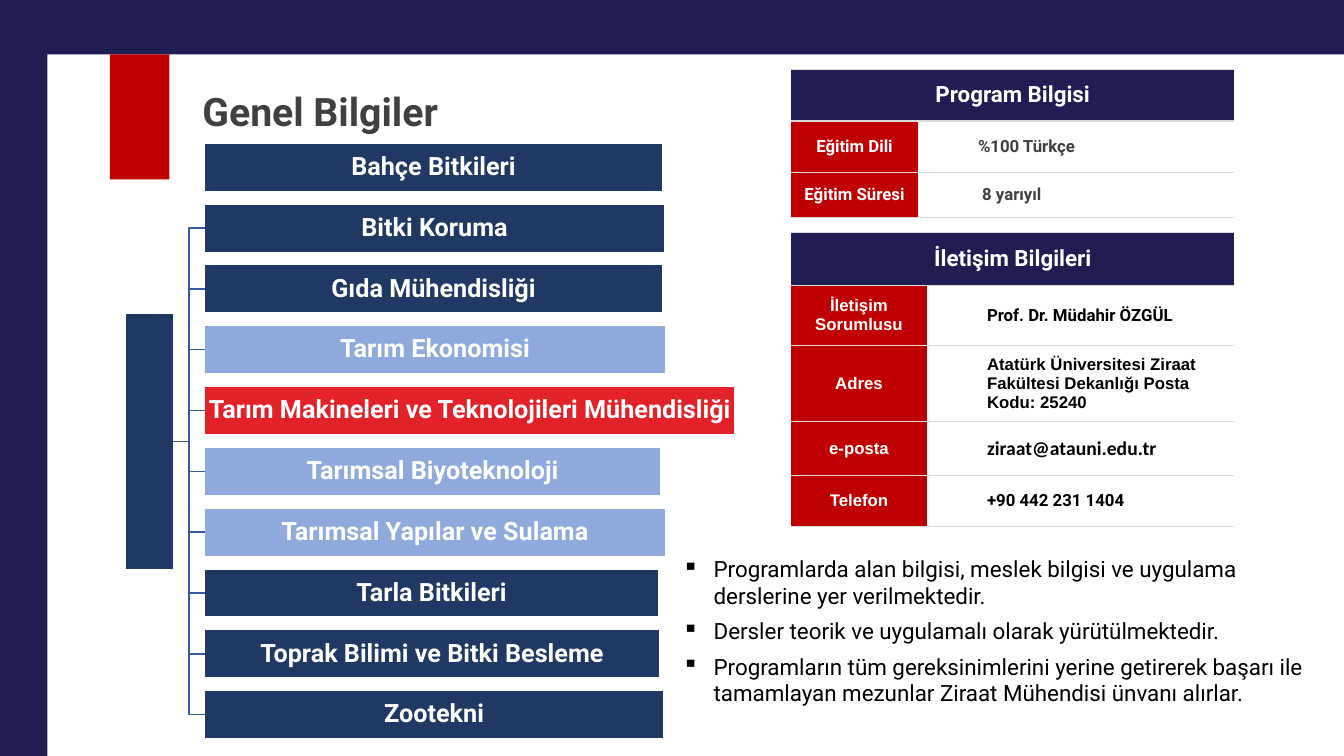
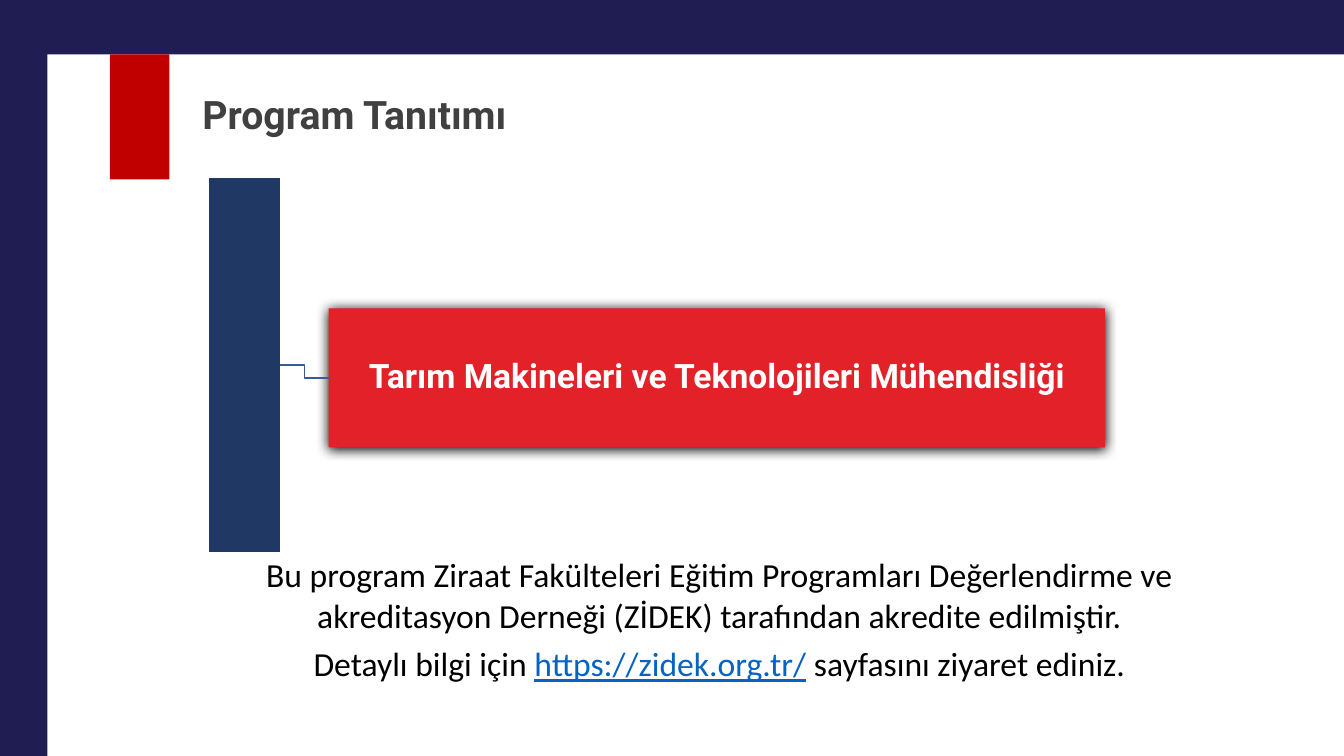
"""Build two slides presenting the faculty's departments and the programme."""
from typing import NamedTuple

from lxml.etree import Element, SubElement
from pptx import Presentation
from pptx.dml.color import RGBColor
from pptx.enum.shapes import MSO_CONNECTOR, MSO_SHAPE
from pptx.enum.text import MSO_ANCHOR, PP_ALIGN
from pptx.oxml.ns import qn
from pptx.shapes.autoshape import Shape
from pptx.slide import Slide
from pptx.text.text import TextFrame, _Paragraph
from pptx.util import Inches, Pt

BAND = RGBColor(0x20, 0x1D, 0x52)
HEADER = RGBColor(0x1F, 0x1D, 0x52)
ACCENT = RGBColor(0xC0, 0x00, 0x00)
NAVY = RGBColor(0x20, 0x38, 0x64)
SKY = RGBColor(0x8F, 0xAA, 0xDC)
RED = RGBColor(0xE2, 0x21, 0x28)
BRANCH = RGBColor(0x36, 0x5B, 0x9D)
RULE = RGBColor(0xD9, 0xD9, 0xD9)
LINK = RGBColor(0x05, 0x63, 0xC1)
GREY = RGBColor(0x40, 0x40, 0x41)
BLACK = RGBColor(0, 0, 0)
WHITE = RGBColor(0xFF, 0xFF, 0xFF)

SLIDE_WIDTH, SLIDE_HEIGHT = 13.33, 7.5
BAND_LEFT, BAND_TOP = 0.47, 0.54
PROGRAM = "Tarım Makineleri ve Teknolojileri Mühendisliği"


class Box(NamedTuple):
    """Position and size in inches."""

    left: float
    top: float
    width: float
    height: float


class Style(NamedTuple):
    """Look of a run of text."""

    size: float
    color: RGBColor = WHITE
    font: str = "Roboto"
    bold: bool = True
    underline: bool = False


class Department(NamedTuple):
    """One bar of the department list."""

    name: str
    width: float
    color: RGBColor = NAVY


class Fact(NamedTuple):
    """One labelled row of an information table."""

    label: str
    value: str
    height: float
    label_style: Style
    value_style: Style


class Run(NamedTuple):
    """A piece of text with its style."""

    text: str
    style: Style


LABEL = Style(12)
LABEL_ARIAL = Style(12, font="Arial")
VALUE = Style(12, BLACK)
VALUE_GREY = Style(12, GREY)
BULLET = Style(16, BLACK, bold=False)
NOTE = Style(24, BLACK, "Calibri", False)

DEPARTMENTS = [
    Department("Bahçe Bitkileri", 4.54),
    Department("Bitki Koruma", 4.56),
    Department("Gıda Mühendisliği", 4.54),
    Department("Tarım Ekonomisi", 4.57, SKY),
    Department(PROGRAM, 5.26, RED),
    Department("Tarımsal Biyoteknoloji", 4.52, SKY),
    Department("Tarımsal Yapılar ve Sulama", 4.57, SKY),
    Department("Tarla Bitkileri", 4.5),
    Department("Toprak Bilimi ve Bitki Besleme", 4.51),
    Department("Zootekni", 4.55),
]
PROGRAM_FACTS = [
    Fact("Eğitim Dili", "%100 Türkçe", 0.51, LABEL, VALUE_GREY),
    Fact("Eğitim Süresi", " 8 yarıyıl", 0.45, LABEL, VALUE_GREY),
]
CONTACT_FACTS = [
    Fact("İletişim Sorumlusu", "Prof. Dr. Müdahir ÖZGÜL", 0.6, LABEL_ARIAL, VALUE),
    Fact("Adres", "Atatürk Üniversitesi Ziraat Fakültesi Dekanlığı Posta Kodu: 25240",
         0.75, LABEL_ARIAL, Style(12, BLACK, "Arial")),
    Fact("e-posta", "ziraat@atauni.edu.tr", 0.54, LABEL_ARIAL, Style(14, BLACK, "Calibri")),
    Fact("Telefon", "+90 442 231 1404", 0.5, LABEL_ARIAL, VALUE),
]
BULLETS = [
    "Programlarda alan bilgisi, meslek bilgisi ve uygulama derslerine yer verilmektedir.",
    "Dersler teorik ve uygulamalı olarak yürütülmektedir.",
    "Programların tüm gereksinimlerini yerine getirerek başarı ile tamamlayan mezunlar "
    "Ziraat Mühendisi ünvanı alırlar.",
]
ACCREDITATION = [
    [Run("Bu program Ziraat Fakülteleri Eğitim Programları Değerlendirme ve akreditasyon "
         "Derneği (ZİDEK) tarafından akredite edilmiştir.", NOTE)],
    [Run("Detaylı bilgi için ", NOTE),
     Run("https://zidek.org.tr/", NOTE._replace(color=LINK, underline=True)),
     Run(" sayfasını ziyaret ediniz.", NOTE)],
]


def add_run(paragraph: _Paragraph, text: str, style: Style) -> None:
    """Append a styled run to a paragraph."""
    run = paragraph.add_run()
    run.text = text
    run.font.size = Pt(style.size)
    run.font.name = style.font
    run.font.bold = style.bold
    run.font.underline = style.underline
    run.font.color.rgb = style.color


def add_block(slide: Slide, box: Box, fill: RGBColor, outlined: bool = False) -> Shape:
    """Draw a filled rectangle."""
    block = slide.shapes.add_shape(MSO_SHAPE.RECTANGLE, *map(Inches, box))
    block.shadow.inherit = False
    block.fill.solid()
    block.fill.fore_color.rgb = fill
    if outlined:
        block.line.color.rgb = WHITE
        block.line.width = Pt(1)
    else:
        block.line.fill.background()
    return block


def add_caption(block: Shape, text: str, size: float) -> None:
    """Centre a white caption in a block."""
    frame = block.text_frame
    frame.word_wrap = True
    frame.vertical_anchor = MSO_ANCHOR.MIDDLE
    frame.margin_left = frame.margin_right = Inches(0.01)
    frame.margin_top = frame.margin_bottom = Inches(0.01)
    paragraph = frame.paragraphs[0]
    paragraph.alignment = PP_ALIGN.CENTER
    paragraph.line_spacing = 0.9
    add_run(paragraph, text, Style(size))


def add_text_frame(slide: Slide, box: Box) -> TextFrame:
    """Add a wrapping text box."""
    frame = slide.shapes.add_textbox(*map(Inches, box)).text_frame
    frame.word_wrap = True
    return frame


def add_paragraph(frame: TextFrame, index: int) -> _Paragraph:
    """Return the paragraph at the index, adding it after the first."""
    return frame.add_paragraph() if index else frame.paragraphs[0]


def add_branch(slide: Slide, trunk: Shape, target: Shape) -> None:
    """Join the right side of the trunk to the left side of the target."""
    branch = slide.shapes.add_connector(MSO_CONNECTOR.ELBOW, 0, 0, 0, 0)
    branch.begin_connect(trunk, 3)
    branch.end_connect(target, 1)
    branch.line.color.rgb = BRANCH
    branch.line.width = Pt(1)
    SubElement(branch._element.spPr, qn("a:effectLst"))


def add_glow_shadow(block: Shape) -> None:
    """Give a block a soft black shadow below it."""
    effects = block._element.spPr.find(qn("a:effectLst"))
    shadow = SubElement(effects, qn("a:outerShdw"), blurRad=str(Pt(8.5)),
                        dist=str(Pt(1)), dir="5400000", algn="ctr", rotWithShape="0")
    SubElement(shadow, qn("a:srgbClr"), val=str(BLACK))


def add_cell(cell, text: str, style: Style, fill: RGBColor | None) -> None:
    """Fill a table cell with text, colour and horizontal rules."""
    cell.vertical_anchor = MSO_ANCHOR.MIDDLE
    paragraph = cell.text_frame.paragraphs[0]
    if fill is None:
        cell.fill.background()
        cell.margin_left = Inches(0.6)
    else:
        cell.fill.solid()
        cell.fill.fore_color.rgb = fill
        paragraph.alignment = PP_ALIGN.CENTER
    if text:
        add_run(paragraph, text, style)
    for position, side in enumerate(("lnL", "lnR", "lnT", "lnB")):
        border = Element(qn(f"a:{side}"), w=str(Pt(1)))
        if side in ("lnT", "lnB"):
            SubElement(SubElement(border, qn("a:solidFill")), qn("a:srgbClr"), val=str(RULE))
        else:
            SubElement(border, qn("a:noFill"))
        cell._tc.get_or_add_tcPr().insert(position, border)


def add_facts(slide: Slide, top: float, heading: str, heading_height: float,
              label_width: float, facts: list[Fact]) -> None:
    """Draw an information table under a merged heading."""
    width = 4.39
    heights = [heading_height] + [fact.height for fact in facts]
    box = Box(7.85, top, width, sum(heights))
    table = slide.shapes.add_table(len(heights), 2, *map(Inches, box)).table
    table.first_row = table.horz_banding = False
    for column, column_width in zip(table.columns, (label_width, width - label_width)):
        column.width = Inches(column_width)
    for row, height in zip(table.rows, heights):
        row.height = Inches(height)
    add_cell(table.cell(0, 0), heading, Style(16), HEADER)
    add_cell(table.cell(0, 1), "", Style(16), HEADER)
    table.cell(0, 0).merge(table.cell(0, 1))
    for index, fact in enumerate(facts, start=1):
        add_cell(table.cell(index, 0), fact.label, fact.label_style, ACCENT)
        add_cell(table.cell(index, 1), fact.value, fact.value_style, None)


def add_titled_slide(deck, title: str, title_top: float) -> Slide:
    """Add a slide with the shared bands, red tab and title."""
    slide = deck.slides.add_slide(deck.slide_layouts[6])
    add_block(slide, Box(0, 0, BAND_LEFT, SLIDE_HEIGHT), BAND)
    add_block(slide, Box(0, 0, SLIDE_WIDTH, BAND_TOP), BAND)
    frame = add_text_frame(slide, Box(1.91, title_top, 10.14, 1.24))
    frame.vertical_anchor = MSO_ANCHOR.MIDDLE
    frame.paragraphs[0].line_spacing = 0.9
    add_run(frame.paragraphs[0], title, Style(28, GREY))
    add_block(slide, Box(1.09, BAND_TOP, 0.59, 1.24), ACCENT)
    return slide


def build_general_info(deck) -> None:
    """Build the slide with departments, tables and bullets."""
    slide = add_titled_slide(deck, "Genel Bilgiler", 0.51)
    trunk = add_block(slide, Box(1.24, 3.11, 0.48, 2.54), NAVY, True)
    first_top, last_top = 1.42, 6.85
    pitch = (last_top - first_top) / (len(DEPARTMENTS) - 1)
    for index, department in enumerate(DEPARTMENTS):
        box = Box(2.03, first_top + index * pitch, department.width, 0.48)
        bar = add_block(slide, box, department.color, True)
        add_caption(bar, department.name, 18)
        if index:
            add_branch(slide, trunk, bar)

    frame = add_text_frame(slide, Box(6.67, 5.46, 6.66, 1.35))
    for index, text in enumerate(BULLETS):
        paragraph = add_paragraph(frame, index)
        properties = paragraph._p.get_or_add_pPr()
        properties.set("marL", str(Inches(0.31)))
        properties.set("indent", str(Inches(-0.31)))
        SubElement(properties, qn("a:buChar"), char="▪")
        paragraph.space_after = Pt(6)
        add_run(paragraph, text, BULLET)

    add_facts(slide, 0.69, "Program Bilgisi", 0.51, 1.25, PROGRAM_FACTS)
    add_facts(slide, 2.31, "İletişim Bilgileri", 0.52, 1.34, CONTACT_FACTS)


def build_program_intro(deck) -> None:
    """Build the slide presenting the accredited programme."""
    slide = add_titled_slide(deck, "Program Tanıtımı", 0.54)
    trunk = add_block(slide, Box(2.07, 1.76, 0.71, 3.72), NAVY, True)
    program = add_block(slide, Box(3.26, 3.06, 7.7, 1.38), RED)
    add_glow_shadow(program)
    add_caption(program, PROGRAM, 24)
    add_branch(slide, trunk, program)
    frame = add_text_frame(slide, Box(2.37, 5.45, 9.53, 1.4))
    for index, runs in enumerate(ACCREDITATION):
        paragraph = add_paragraph(frame, index)
        paragraph.alignment = PP_ALIGN.CENTER
        paragraph.space_after = Pt(6)
        for run in runs:
            add_run(paragraph, run.text, run.style)


def main() -> None:
    """Build and save the deck."""
    deck = Presentation()
    deck.slide_width, deck.slide_height = Inches(SLIDE_WIDTH), Inches(SLIDE_HEIGHT)
    build_general_info(deck)
    build_program_intro(deck)
    deck.save("out.pptx")


if __name__ == "__main__":
    main()
